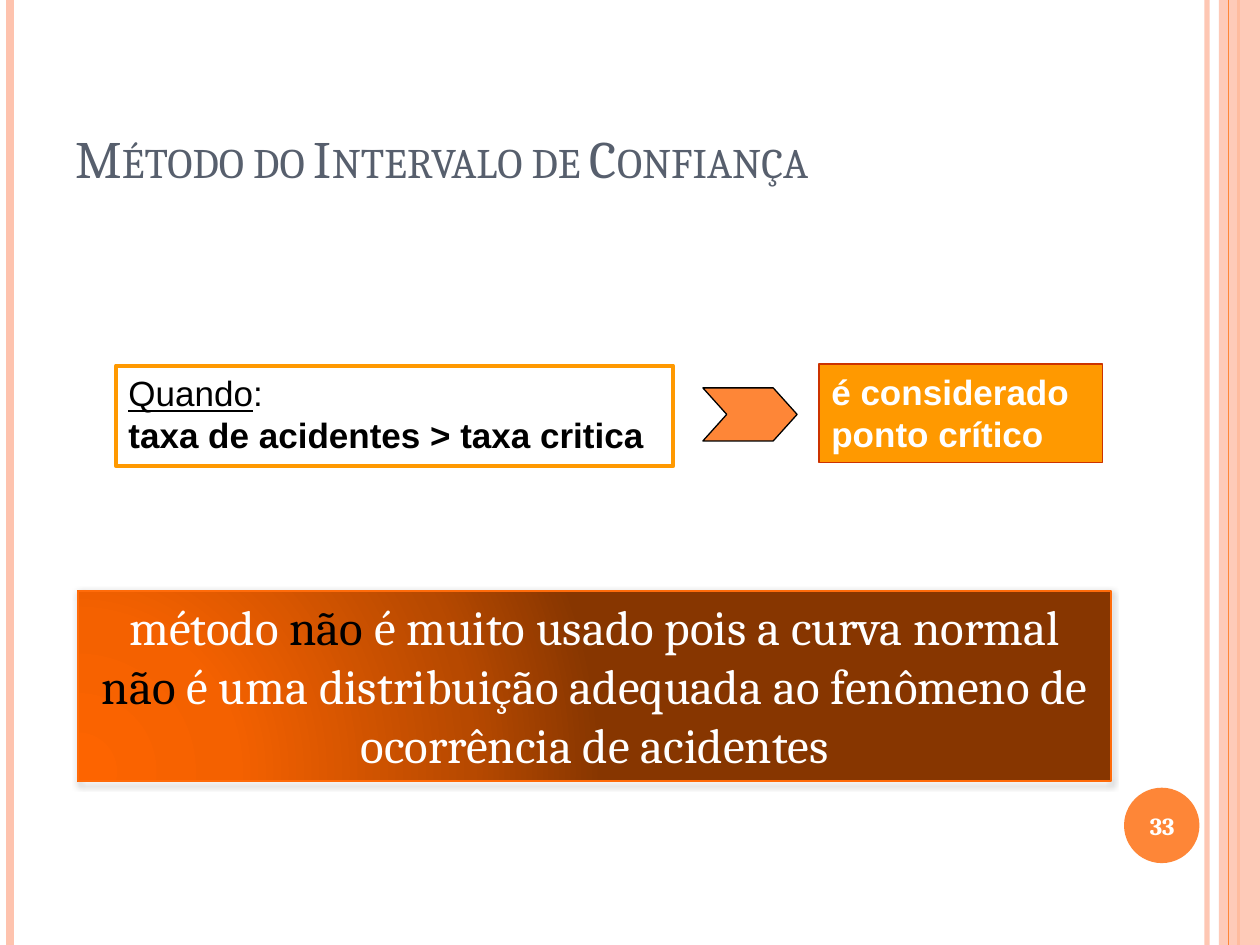
from lxml.etree import SubElement
from pptx import Presentation
from pptx.dml.color import RGBColor
from pptx.enum.shapes import MSO_CONNECTOR, MSO_SHAPE
from pptx.enum.text import MSO_ANCHOR, MSO_AUTO_SIZE, PP_ALIGN
from pptx.oxml import parse_xml
from pptx.oxml.ns import nsdecls, qn
from pptx.util import Cm, Pt

WIDTH, HEIGHT = 25.4, 19.05
PEACH, ORANGE, AMBER = "FEC3AE", "FE8637", "FF9900"
BLACK, WHITE, SLATE = "000000", "FFFFFF", "575F6D"


def rgb(value):
    return RGBColor.from_string(value)


def set_opacity(color_parent, percent):
    color = color_parent.find(".//" + qn("a:srgbClr"))
    SubElement(color, qn("a:alpha"), val=str(percent * 1000))


class SlideBuilder:
    def __init__(self, slide, heading_font="Cambria", body_font="Arial"):
        self.shapes = slide.shapes
        self.heading_font = heading_font
        self.body_font = body_font

    def rule(self, x, color, weight, opacity=100):
        """Draw a vertical line over the full slide height."""
        rule = self.shapes.add_connector(
            MSO_CONNECTOR.STRAIGHT, Cm(x), Cm(0), Cm(x), Cm(HEIGHT))
        rule.line.color.rgb = rgb(color)
        rule.line.width = Pt(weight)
        properties = rule._element.spPr
        if opacity < 100:
            set_opacity(properties.find(qn("a:ln")), opacity)
        SubElement(properties, qn("a:effectLst"))

    def box(self, kind, bounds, fill=None, line=None, weight=0.75):
        box = self.shapes.add_shape(kind, *map(Cm, bounds))
        box.shadow.inherit = False
        if fill:
            box.fill.solid()
            box.fill.fore_color.rgb = rgb(fill)
        else:
            box.fill.background()
        if line:
            box.line.color.rgb = rgb(line)
            box.line.width = Pt(weight)
        else:
            box.line.fill.background()
        return box

    def label(self, bounds):
        return self.shapes.add_textbox(*map(Cm, bounds))

    def add_text(self, holder, paragraphs, size, font, align=PP_ALIGN.LEFT,
                 anchor=MSO_ANCHOR.TOP, grow=False):
        """Fill holder with paragraphs, each a list of (text, color, style) runs."""
        frame = holder.text_frame
        frame.word_wrap = True
        frame.vertical_anchor = anchor
        frame.auto_size = MSO_AUTO_SIZE.SHAPE_TO_FIT_TEXT if grow else MSO_AUTO_SIZE.NONE
        for index, runs in enumerate(paragraphs):
            paragraph = frame.add_paragraph() if index else frame.paragraphs[0]
            paragraph.alignment = align
            for text, color, style in runs:
                run = paragraph.add_run()
                run.text = text
                run.font.name = font
                run.font.size = Pt(size)
                run.font.color.rgb = rgb(color)
                run.font.bold = style == "bold"
                run.font.underline = style == "underline"
                if style == "small caps":
                    run.font._element.set("cap", "small")

    def radial_gradient(self, box, stops):
        """Replace the empty fill of box with a gradient centred low on its left."""
        stop_list = "".join(
            f'<a:gs pos="{position * 1000}"><a:srgbClr val="{color}"/></a:gs>'
            for position, color in stops)
        gradient = parse_xml(
            f'<a:gradFill {nsdecls("a")} rotWithShape="1"><a:gsLst>{stop_list}</a:gsLst>'
            '<a:path path="circle">'
            '<a:fillToRect l="5000" t="100000" r="120000" b="10000"/>'
            '</a:path></a:gradFill>')
        properties = box._element.spPr
        properties.replace(properties.find(qn("a:noFill")), gradient)

    def drop_shadow(self, box, color, opacity, blur, distance):
        effects = box._element.spPr.find(qn("a:effectLst"))
        shadow = SubElement(
            effects, qn("a:outerShdw"), blurRad=str(int(Pt(blur))),
            dist=str(int(Pt(distance))), dir="5400000", algn="ctr", rotWithShape="0")
        SubElement(shadow, qn("a:srgbClr"), val=color)
        set_opacity(shadow, opacity)


def main():
    deck = Presentation()
    deck.slide_width, deck.slide_height = Cm(WIDTH), Cm(HEIGHT)
    builder = SlideBuilder(deck.slides.add_slide(deck.slide_layouts[6]))
    heading, body = builder.heading_font, builder.body_font

    builder.rule(24.33, PEACH, 3, opacity=93)
    builder.rule(0.2, PEACH, 4.5)
    builder.rule(24.97, ORANGE, 1.5)
    side_band = builder.box(MSO_SHAPE.RECTANGLE, (24.57, 0, 0.83, HEIGHT), PEACH)
    set_opacity(side_band._element.spPr.find(qn("a:solidFill")), 87)
    builder.rule(24.77, ORANGE, 0.75)
    builder.box(MSO_SHAPE.OVAL, (22.66, 15.88, 1.52, 1.52), ORANGE)

    title = builder.label((1.27, 0.76, 20.75, 3.18))
    builder.add_text(title, [[("Método do Intervalo de Confiança", SLATE, "small caps")]],
                     30, heading, anchor=MSO_ANCHOR.BOTTOM)

    condition = builder.box(MSO_SHAPE.RECTANGLE, (2.34, 7.37, 11.23, 2.03),
                            line=AMBER, weight=2.25)
    builder.add_text(condition, [
        [("Quando", BLACK, "underline"), (":", BLACK, None)],
        [("taxa de acidentes > taxa critica", BLACK, "bold")],
    ], 20, body, grow=True)

    result = builder.box(MSO_SHAPE.RECTANGLE, (16.51, 7.34, 5.72, 1.98), AMBER, "CC3300")
    builder.add_text(result, [[("é considerado ponto crítico", WHITE, "bold")]],
                     20, body, grow=True)

    implies = builder.box(MSO_SHAPE.CHEVRON, (14.17, 7.82, 1.9, 1.07), ORANGE, BLACK)
    implies.adjustments[0] = 0.45

    conclusion = builder.box(MSO_SHAPE.RECTANGLE, (1.57, 11.91, 20.83, 3.84),
                             line="FF6B0A", weight=1)
    builder.radial_gradient(
        conclusion, [(0, "FD6400"), (30, "F46100"), (75, "B74900"), (100, "873600")])
    builder.drop_shadow(conclusion, BLACK, opacity=42, blur=4, distance=1.6)
    builder.add_text(conclusion, [[
        ("método ", WHITE, None),
        ("não ", BLACK, None),
        ("é muito usado pois a curva normal ", WHITE, None),
        ("não", BLACK, None),
        (" é uma distribuição adequada ao fenômeno de ocorrência de acidentes", WHITE, None),
    ]], 28, heading, PP_ALIGN.CENTER, grow=True)

    page_number = builder.label((22.58, 15.93, 1.7, 1.45))
    builder.add_text(page_number, [[("33", WHITE, "bold")]], 14, heading,
                     PP_ALIGN.CENTER, MSO_ANCHOR.MIDDLE)

    deck.save("out.pptx")


if __name__ == "__main__":
    main()
